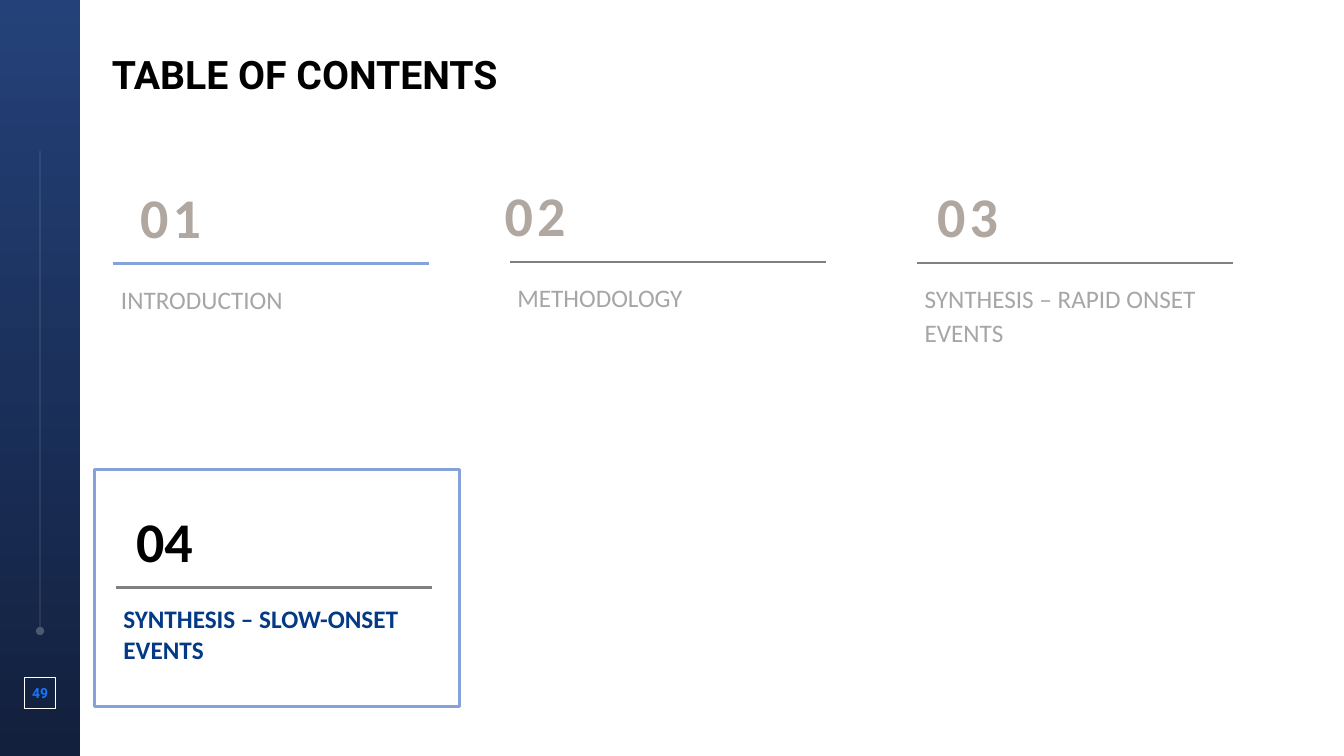
from lxml.etree import SubElement
from pptx import Presentation
from pptx.dml.color import RGBColor
from pptx.enum.shapes import MSO_CONNECTOR, MSO_SHAPE
from pptx.enum.text import MSO_ANCHOR, PP_ALIGN
from pptx.oxml.ns import qn
from pptx.util import Cm, Pt

COLOURS = {
    "band_top": "244179", "band_bottom": "12203D", "white": "FFFFFF",
    "black": "000000", "page_number": "1775F9", "muted_label": "A6A6A6",
    "muted_number": "B0A8A0", "grey_rule": "808080", "blue": "85A2DB",
    "active_label": "033985",
}
MUTED = {
    "number": {"name": "Calibri", "size": Pt(40), "bold": True, "color": "muted_number"},
    "label": {"name": "Calibri", "size": Pt(18), "bold": False, "color": "muted_label"},
    "number_spacing": 300, "line_spacing": 1.14,
}
ACTIVE = {
    "number": {"name": "Calibri", "size": Pt(40), "bold": True, "color": "black"},
    "label": {"name": "Calibri", "size": Pt(18), "bold": True, "color": "active_label"},
    "number_spacing": 0, "line_spacing": 1.0,
}
# number, label, rule left, rule top, number indent, rule colour, rule weight, style
ENTRIES = [
    ("01", "INTRODUCTION", 2.86, 6.65, 0.42, "blue", 2.25, MUTED),
    ("02", "METHODOLOGY", 12.85, 6.6, -0.38, "grey_rule", 1.5, MUTED),
    ("03", "SYNTHESIS – RAPID ONSET EVENTS", 23.11, 6.63, 0.26, "grey_rule", 1.5, MUTED),
    ("04", "SYNTHESIS – SLOW-ONSET EVENTS", 2.92, 14.81, 0.26, "grey_rule", 2.25, ACTIVE),
]


def rgb(name):
    return RGBColor.from_string(COLOURS[name])


def format_font(font, values):
    for key, value in values.items():
        if key == "color":
            font.color.rgb = rgb(value)
        else:
            setattr(font, key, value)


def add_line(slide, start, end, colour, weight):
    line = slide.shapes.add_connector(
        MSO_CONNECTOR.STRAIGHT, *(Cm(value) for value in start + end))
    line.line.color.rgb = rgb(colour)
    line.line.width = Pt(weight)
    SubElement(line._element.spPr, qn("a:effectLst"))
    return line


def add_rectangle(slide, box, colour=None, weight=0):
    """Add an unfilled rectangle, outlined when a colour is given."""
    shape = slide.shapes.add_shape(MSO_SHAPE.RECTANGLE, *(Cm(value) for value in box))
    shape.shadow.inherit = False
    shape.fill.background()
    if colour:
        shape.line.color.rgb = rgb(colour)
        shape.line.width = Pt(weight)
    else:
        shape.line.fill.background()
    return shape


def add_text(slide, box, text, font_values):
    frame = slide.shapes.add_textbox(*(Cm(value) for value in box)).text_frame
    frame.word_wrap = True
    paragraph = frame.paragraphs[0]
    run = paragraph.add_run()
    run.text = text
    format_font(run.font, font_values)
    return frame, paragraph, run


def clear_margins(frame):
    for side in ("left", "top", "right", "bottom"):
        setattr(frame, f"margin_{side}", 0)


def add_side_band(slide, left, top, width, height, page):
    band = add_rectangle(slide, (left, top, width, height))
    band.fill.gradient()
    band.fill.gradient_angle = 270
    for stop, colour, position in zip(
            band.fill.gradient_stops, ("band_top", "band_bottom"), (0, 1)):
        stop.color.rgb = rgb(colour)
        stop.position = position

    centre = left + width / 2
    line = add_line(slide, (centre, top + 15.9), (centre, top + 3.81), "white", 0.5)
    outline = line.line._get_or_add_ln()
    SubElement(outline.find(f".//{qn('a:srgbClr')}"), qn("a:alpha"), val="24000")
    SubElement(outline, qn("a:headEnd"), type="oval")

    side = 0.78
    add_rectangle(slide, (centre - side / 2, top + 17.07, side, side), "white", 0.5)
    frame, paragraph, _ = add_text(
        slide, (centre - side / 2, top + 17.25, side, 0.43), page,
        {"name": "Roboto", "size": Pt(10), "bold": True, "color": "page_number"})
    clear_margins(frame)
    paragraph.alignment = PP_ALIGN.CENTER


def add_title(slide, left, top, width, height, text):
    title = slide.shapes.title
    for key, value in {"left": left, "top": top, "width": width, "height": height}.items():
        setattr(title, key, Cm(value))
    frame = title.text_frame
    clear_margins(frame)
    frame.vertical_anchor = MSO_ANCHOR.MIDDLE
    frame.text = text
    paragraph = frame.paragraphs[0]
    paragraph.alignment = PP_ALIGN.LEFT
    format_font(paragraph.runs[0].font,
                {"name": "Roboto", "size": Pt(28), "bold": True, "color": "black"})


def add_entry(slide, number, label, left, top, indent, colour, weight, style):
    """Place a number above and a label below a rule starting at left, top."""
    width = 7.96
    add_line(slide, (left, top), (left + width, top), colour, weight)
    _, _, run = add_text(slide, (left + indent, top - 2.17, 2.5, 1.96), number, style["number"])
    if style["number_spacing"]:
        run.font._element.set("spc", str(style["number_spacing"]))
    _, paragraph, _ = add_text(
        slide, (left - 0.06, top + 0.28, width, 1.8), label, style["label"])
    paragraph.line_spacing = style["line_spacing"]


def main():
    presentation = Presentation()
    presentation.slide_width = Cm(33.87)
    presentation.slide_height = Cm(19.05)
    slide = presentation.slides.add_slide(presentation.slide_layouts[5])
    add_side_band(slide, 0, 0, 2.02, 19.05, "49")
    add_title(slide, 2.82, 1.25, 30.12, 1.2, "TABLE OF CONTENTS")
    add_rectangle(slide, (2.39, 11.84, 9.19, 5.97), "blue", 2.25)
    for entry in ENTRIES:
        add_entry(slide, *entry)
    presentation.save("out.pptx")


if __name__ == "__main__":
    main()
